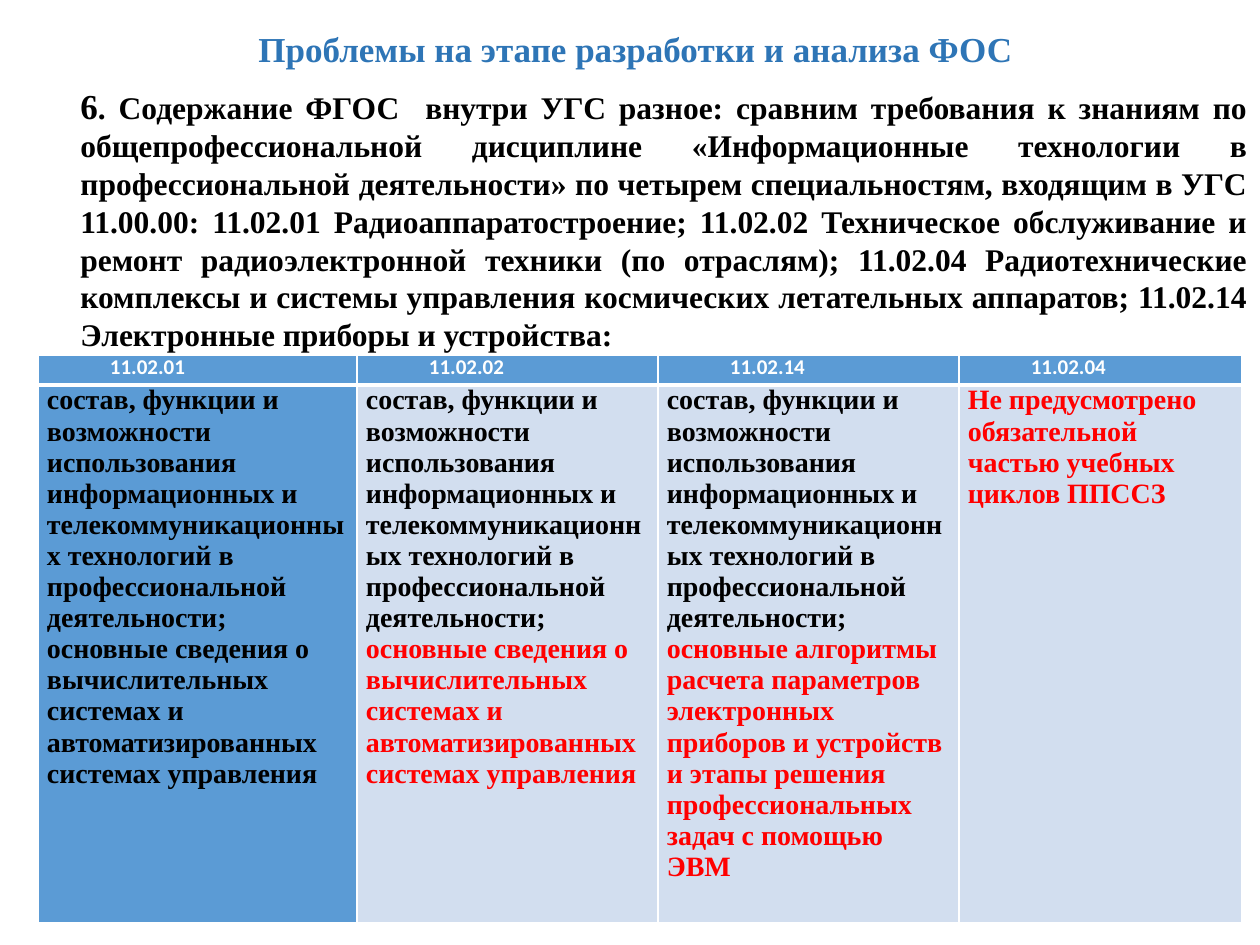
"""Build a slide comparing discipline requirements across four specialities."""
from dataclasses import dataclass

from lxml import etree
from pptx import Presentation
from pptx.dml.color import RGBColor
from pptx.enum.text import MSO_ANCHOR, PP_ALIGN
from pptx.oxml.ns import qn
from pptx.util import Pt

CENTER, JUSTIFY, LEFT = PP_ALIGN.CENTER, PP_ALIGN.JUSTIFY, PP_ALIGN.LEFT
MIDDLE, TOP = MSO_ANCHOR.MIDDLE, MSO_ANCHOR.TOP
EMU_PER_PX = 914400 / 126


@dataclass(frozen=True)
class Theme:
    serif: str = "Times New Roman"
    sans: str = "Calibri"
    title: str = "2E75B6"
    black: str = "000000"
    white: str = "FFFFFF"
    red: str = "FF0000"
    blue: str = "5B9BD5"
    pale: str = "D2DEEF"
    title_size: int = 20
    intro_size: int = 18
    body_size: int = 16
    header_size: int = 12


THEME = Theme()


def px(length):
    return round(length * EMU_PER_PX)


def add_span(para, text, size, color, font=THEME.serif):
    span = para.add_run()
    span.text = text
    span.font.name = font
    span.font.size = Pt(size)
    span.font.bold = True
    span.font.color.rgb = RGBColor.from_string(color)


deck = Presentation()
deck.slide_width, deck.slide_height = px(1260), px(945)
page = deck.slides.add_slide(deck.slide_layouts[6])

title_frame = page.shapes.add_textbox(px(53), px(19), px(1165), px(59)).text_frame
title_frame.word_wrap = True
title_frame.vertical_anchor = MIDDLE
title_frame.margin_left = title_frame.margin_right = 0
title_frame.margin_top = title_frame.margin_bottom = 0
title_para = title_frame.paragraphs[0]
title_para.alignment = CENTER
add_span(title_para, "Проблемы на этапе разработки и анализа ФОС", THEME.title_size, THEME.title)

intro_frame = page.shapes.add_textbox(px(68), px(78), px(1192), px(665)).text_frame
intro_frame.word_wrap = True
intro_frame.vertical_anchor = TOP
intro_para = intro_frame.paragraphs[0]
intro_para.alignment = JUSTIFY
add_span(intro_para, "6", THEME.title_size, THEME.black)
add_span(
    intro_para,
    ". Содержание ФГОС  внутри УГС разное: сравним требования к знаниям по "
    "общепрофессиональной дисциплине «Информационные технологии в профессиональной "
    "деятельности» по четырем специальностям, входящим в УГС 11.00.00: "
    "11.02.01 Радиоаппаратостроение; 11.02.02 Техническое обслуживание и ремонт "
    "радиоэлектронной техники (по отраслям); 11.02.04 Радиотехнические комплексы и "
    "системы управления космических летательных аппаратов; 11.02.14 Электронные "
    "приборы и устройства:",
    THEME.intro_size,
    THEME.black,
)

COMMON = (
    "состав, функции и возможности использования информационных и "
    "телекоммуникационных технологий в профессиональной деятельности;"
)
SYSTEMS = (
    "основные сведения о вычислительных системах и автоматизированных "
    "системах управления"
)
ALGORITHMS = (
    "основные алгоритмы расчета параметров электронных приборов и устройств и "
    "этапы решения профессиональных задач с помощью ЭВМ"
)
ABSENT = "Не предусмотрено обязательной частью учебных циклов ППССЗ"
SPECIALITIES = [
    ("11.02.01", 319, THEME.blue, [(COMMON, THEME.black), (SYSTEMS, THEME.black)]),
    ("11.02.02", 301, THEME.pale, [(COMMON, THEME.black), (SYSTEMS, THEME.red)]),
    ("11.02.14", 301, THEME.pale, [(COMMON, THEME.black), (ALGORITHMS, THEME.red)]),
    ("11.02.04", 283, THEME.pale, [(ABSENT, THEME.red)]),
]
ROW_HEIGHTS = [30, 538]

table = page.shapes.add_table(
    2, len(SPECIALITIES), px(38), px(355), px(1204), px(sum(ROW_HEIGHTS))
).table
for row, height in zip(table.rows, ROW_HEIGHTS):
    row.height = px(height)

for column, (code, width, body_fill, requirements) in enumerate(SPECIALITIES):
    table.columns[column].width = px(width)
    header, body = table.cell(0, column), table.cell(1, column)

    header_para = header.text_frame.paragraphs[0]
    header_para.alignment = JUSTIFY
    header_para._p.get_or_add_pPr().set("indent", str(px(63)))
    add_span(header_para, code, THEME.header_size, THEME.white, THEME.sans)

    for index, (text, color) in enumerate(requirements):
        para = body.text_frame.add_paragraph() if index else body.text_frame.paragraphs[0]
        para.alignment = LEFT
        add_span(para, text, THEME.body_size, color)

    for cell, fill, bottom in ((header, THEME.blue, 3), (body, body_fill, 1)):
        cell.margin_left = cell.margin_right = px(9)
        cell.margin_top = cell.margin_bottom = 0
        cell.vertical_anchor = TOP
        properties = cell._tc.get_or_add_tcPr()
        top = 3 if cell is body else 1
        for side, weight in (("L", 1), ("R", 1), ("T", top), ("B", bottom)):
            border = etree.SubElement(properties, qn(f"a:ln{side}"), w=str(Pt(weight)))
            line_fill = etree.SubElement(border, qn("a:solidFill"))
            etree.SubElement(line_fill, qn("a:srgbClr"), val=THEME.white)
        cell.fill.solid()
        cell.fill.fore_color.rgb = RGBColor.from_string(fill)

deck.save("out.pptx")
